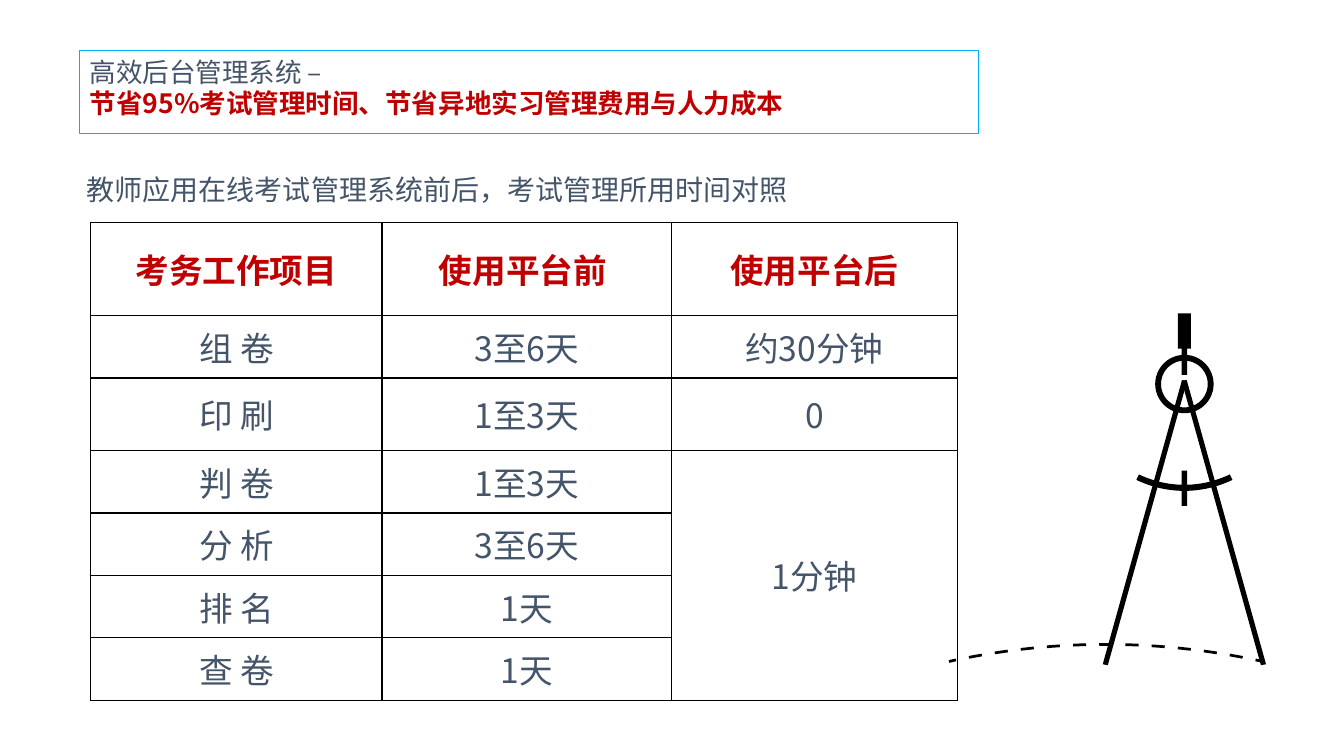
import dataclasses
import math

import lxml.etree
import pptx
import pptx.dml.color
import pptx.enum.shapes
import pptx.enum.text
import pptx.oxml.ns
import pptx.util

SHAPE = pptx.enum.shapes.MSO_SHAPE
ALIGN = pptx.enum.text.PP_ALIGN
ANCHOR = pptx.enum.text.MSO_ANCHOR


@dataclasses.dataclass(frozen=True)
class Theme:
    font: str = "Noto Sans CJK SC"
    text: str = "445469"
    accent: str = "C00000"
    frame: str = "00B0F0"
    ink: str = "000000"
    title_size: float = 19
    body_size: float = 20
    table_size: float = 24


THEME = Theme()

# Grid of square cells; all lengths below are counted in cells
CELL = pptx.util.Inches(0.1)
GRID_COLUMNS, GRID_ROWS = 133.33, 75

TABLE_COLUMNS = [28.9, 28.7, 28.4]
TABLE_ROWS = [9.2, 6.2, 7.2] + [6.2] * 4
TABLE_TEXT = [
    ["考务工作项目", "使用平台前 ", "使用平台后"],
    ["组 卷", "3至6天", "约30分钟"],
    ["印 刷", "1至3天", "0"],
    ["判 卷", "1至3天", "1分钟"],
    ["分 析", "3至6天", ""],
    ["排 名", "1天", ""],
    ["查 卷", "1天", ""],
]


def cells(count):
    return pptx.util.Emu(round(count * CELL))


def color(value):
    return pptx.dml.color.RGBColor.from_string(value)


def place(shape, left, top, width, height):
    shape.left, shape.top = cells(left), cells(top)
    shape.width, shape.height = cells(width), cells(height)


def format_paragraph(paragraph, size, text_color, bold=False, align=ALIGN.LEFT):
    paragraph.alignment = align
    paragraph.space_before = pptx.util.Pt(0)
    for run in paragraph.runs:
        run.font.size = pptx.util.Pt(size)
        run.font.bold = bold
        run.font.color.rgb = color(text_color)
        run.font.name = THEME.font
        east_asian = lxml.etree.SubElement(run.font._element, pptx.oxml.ns.qn("a:ea"))
        east_asian.set("typeface", THEME.font)


def fill_placeholder(shape, box, lines, size):
    """Write (text, colour, bold) lines into a placeholder without bullets."""
    place(shape, *box)
    frame = shape.text_frame
    frame.text = "\n".join(line[0] for line in lines)
    frame.word_wrap = True
    frame.auto_size = pptx.enum.text.MSO_AUTO_SIZE.NONE
    frame.vertical_anchor = ANCHOR.TOP
    for paragraph, (_, text_color, bold) in zip(frame.paragraphs, lines):
        properties = paragraph._p.get_or_add_pPr()
        properties.set("marL", "0")
        properties.set("indent", "0")
        lxml.etree.SubElement(properties, pptx.oxml.ns.qn("a:buNone"))
        format_paragraph(paragraph, size, text_color, bold)


def add_borders(cell):
    properties = cell._tc.get_or_add_tcPr()
    for side in ("a:lnL", "a:lnR", "a:lnT", "a:lnB"):
        line = lxml.etree.SubElement(properties, pptx.oxml.ns.qn(side))
        line.set("w", str(pptx.util.Pt(1)))
        fill = lxml.etree.SubElement(line, pptx.oxml.ns.qn("a:solidFill"))
        lxml.etree.SubElement(fill, pptx.oxml.ns.qn("a:srgbClr")).set("val", THEME.ink)


def add_time_table(slide, left, top):
    table = slide.shapes.add_table(
        len(TABLE_ROWS), len(TABLE_COLUMNS), cells(left), cells(top),
        cells(sum(TABLE_COLUMNS)), cells(sum(TABLE_ROWS))).table
    table.first_row = table.horz_banding = False
    for column, width in zip(table.columns, TABLE_COLUMNS):
        column.width = cells(width)
    for row, height in zip(table.rows, TABLE_ROWS):
        row.height = cells(height)
    for row_index, row_text in enumerate(TABLE_TEXT):
        heading = row_index == 0
        for column_index, text in enumerate(row_text):
            cell = table.cell(row_index, column_index)
            add_borders(cell)
            cell.fill.background()
            cell.vertical_anchor = ANCHOR.MIDDLE
            cell.margin_left = cell.margin_right = cells(0.7)
            cell.margin_top = cell.margin_bottom = 0
            cell.text_frame.text = text
            format_paragraph(cell.text_frame.paragraphs[0], THEME.table_size,
                             THEME.accent if heading else THEME.text, heading, ALIGN.CENTER)
    table.cell(3, 2).merge(table.cell(6, 2))


def paint(shape):
    shape.shadow.inherit = False
    shape.fill.solid()
    shape.fill.fore_color.rgb = color(THEME.ink)
    shape.line.fill.background()


def add_preset(group, kind, left, top, width, height):
    shape = group.shapes.add_shape(
        kind, cells(left), cells(top), cells(width), cells(height))
    paint(shape)
    return shape


def add_outline(group, contours):
    """Draw closed contours of (column, row) points as one filled shape."""
    contours = [[(cells(x), cells(y)) for x, y in contour] for contour in contours]
    builder = group.shapes.build_freeform(*contours[0][0])
    for index, contour in enumerate(contours):
        if index:
            builder.move_to(*contour[0])
        builder.add_line_segments(contour[1:], close=True)
    paint(builder.convert_to_shape())


def arc_band(center, inner, outer, start, end, steps):
    """Points around a ring sector; angles run clockwise from straight up."""
    angles = [start + (end - start) * step / steps for step in range(steps + 1)]
    edges = [(outer, angle) for angle in angles] + [(inner, angle) for angle in angles[::-1]]
    return [(center[0] + radius * math.sin(angle), center[1] - radius * math.cos(angle))
            for radius, angle in edges]


def add_compass(slide, axis, pivot):
    group = slide.shapes.add_group_shape()
    # Ring, neck and handle
    ring = add_preset(group, SHAPE.DONUT, axis - 2.9, 35.2, 5.8, 5.8)
    ring.adjustments[0] = 0.1
    add_preset(group, SHAPE.RECTANGLE, axis - 0.27, 32.9, 0.54, 4.3)
    add_preset(group, SHAPE.RECTANGLE, axis - 0.65, 31.1, 1.3, 3.5)
    # Mirrored legs
    for side in (-1, 1):
        leg = [(-0.27, 0.1), (0.23, 0), (8.1, 28.2), (7.6, 28.3)]
        add_outline(group, [[(axis + side * x, pivot + y) for x, y in leg]])
    # Crossbar arc and its screw
    spread = math.radians(25.7)
    add_outline(group, [arc_band((axis, pivot), 10.4, 11, math.pi - spread,
                                 math.pi + spread, 24)])
    add_preset(group, SHAPE.RECTANGLE, axis - 0.27, 46.7, 0.54, 3.5)
    # Dashed arc: dash and gap have equal length, end dashes are clipped
    radius, pitch, limit = 72.4, 0.036, 0.217
    add_outline(group, [
        arc_band((109.7, 63.8 + radius), radius - 0.27, radius,
                 max(-limit, (dash - 0.25) * pitch), min(limit, (dash + 0.25) * pitch), 4)
        for dash in range(-6, 7)])


def main():
    presentation = pptx.Presentation()
    presentation.slide_width = cells(GRID_COLUMNS)
    presentation.slide_height = cells(GRID_ROWS)
    slide = presentation.slides.add_slide(presentation.slide_layouts[1])

    # Framed title
    title = slide.shapes.title
    fill_placeholder(title, (7.9, 5, 89.2, 8.2), [
        ("高效后台管理系统 –", THEME.text, False),
        ("节省95%考试管理时间、节省异地实习管理费用与人力成本", THEME.accent, True),
    ], THEME.title_size)
    title.line.color.rgb = color(THEME.frame)
    title.line.width = pptx.util.Pt(0.75)

    # Table caption
    fill_placeholder(slide.placeholders[1], (7.6, 16.6, 106.1, 4.4), [
        ("教师应用在线考试管理系统前后，考试管理所用时间对照", THEME.text, False),
    ], THEME.body_size)

    add_time_table(slide, 9, 22.1)
    add_compass(slide, 117.5, 37.7)
    presentation.save("out.pptx")


if __name__ == "__main__":
    main()
